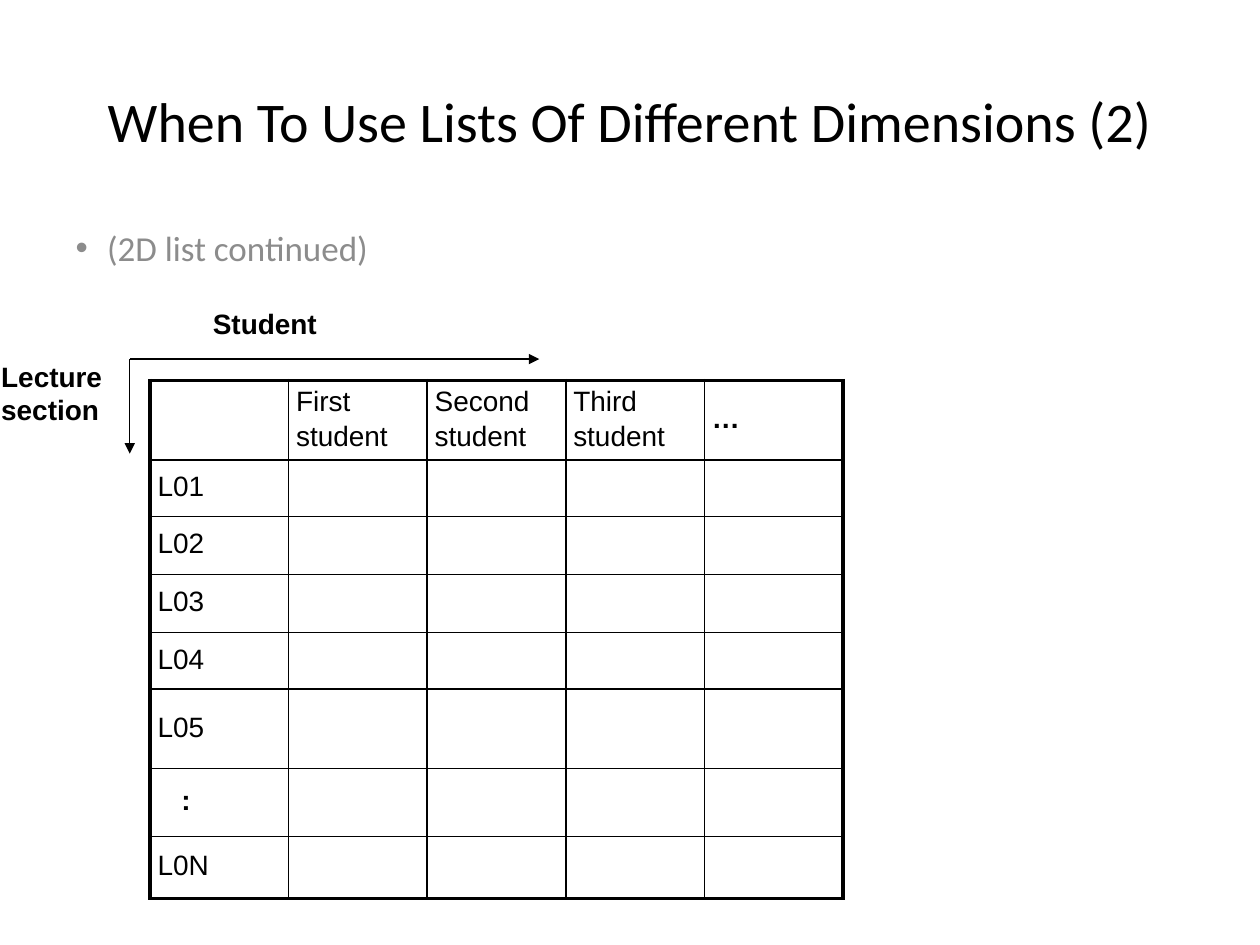
from lxml.etree import SubElement
from pptx import Presentation
from pptx.dml.color import RGBColor
from pptx.enum.shapes import MSO_CONNECTOR
from pptx.enum.text import MSO_ANCHOR, PP_ALIGN
from pptx.oxml.ns import qn
from pptx.util import Inches, Pt


def set_font(paragraph, size, color="000000", name="Arial", bold=False):
    font = paragraph.font
    font.size, font.name, font.bold = Pt(size), name, bold
    font.color.rgb = RGBColor.from_string(color)


def add_border(cell, side, width):
    line = SubElement(cell._tc.get_or_add_tcPr(), qn(f"a:{side}"), w=str(Pt(width)))
    fill = SubElement(line, qn("a:solidFill"))
    SubElement(fill, qn("a:srgbClr"), val="000000")


prs = Presentation()
prs.slide_width, prs.slide_height = Inches(10), Inches(7.5)
slide = prs.slides.add_slide(prs.slide_layouts[1])
shapes = slide.shapes

# Title and bullet
title, body = shapes.title, slide.placeholders[1]
for holder, text, top, height, size, color, align in [
    (title, "When To Use Lists Of Different Dimensions (2)", 0.33, 1.25, 32, "000000", PP_ALIGN.CENTER),
    (body, "(2D list continued)", 1.75, 0.5, 20, "8C8C8C", PP_ALIGN.LEFT),
]:
    holder.left, holder.top = Inches(0.5), Inches(top)
    holder.width, holder.height = Inches(9), Inches(height)
    holder.text_frame.text = text
    paragraph = holder.text_frame.paragraphs[0]
    paragraph.alignment = align
    set_font(paragraph, size, color, "Calibri")
bullet_format = body.text_frame.paragraphs[0]._p.get_or_add_pPr()
bullet_format.set("marL", str(Inches(0.25)))
bullet_format.set("indent", str(-Inches(0.25)))

# Axis arrows and their labels
for text, left, top, height, end_x, end_y in [
    ("Student", 1.69, 2.43, 0.27, 4.28, 2.85),
    ("Lecture section", 0.01, 2.85, 0.53, 1.03, 3.6),
]:
    arrow = shapes.add_connector(
        MSO_CONNECTOR.STRAIGHT, Inches(1.03), Inches(2.85), Inches(end_x), Inches(end_y))
    arrow.line.width = Pt(0.75)
    arrow.line.color.rgb = RGBColor.from_string("000000")
    SubElement(arrow.line._get_or_add_ln(), qn("a:tailEnd"), type="triangle")
    SubElement(arrow._element.spPr, qn("a:effectLst"))

    label = shapes.add_textbox(Inches(left), Inches(top), Inches(0.93), Inches(height)).text_frame
    label.margin_left = label.margin_right = label.margin_top = label.margin_bottom = 0
    label.word_wrap = True
    label.text = text
    set_font(label.paragraphs[0], 16, bold=True)

# Table of lecture sections by student
headings = ["", "First\nstudent", "Second\nstudent", "Third\nstudent", "…"]
sections = ["L01", "L02", "L03", "L04", "L05", ":", "L0N"]
row_heights = [0.63, 0.45, 0.46, 0.46, 0.45, 0.63, 0.54, 0.49]
last_row, last_column = len(sections), len(headings) - 1
grid = shapes.add_table(
    last_row + 1, last_column + 1, Inches(1.19), Inches(3.02), Inches(5.5), Inches(4.12)).table
grid.first_row = grid.horz_banding = False
for column in grid.columns:
    column.width = Inches(1.1)
for row, height in zip(grid.rows, row_heights):
    row.height = Inches(height)

for r, section in enumerate([""] + sections):
    for c, heading in enumerate(headings):
        cell = grid.cell(r, c)
        text = heading if r == 0 else section if c == 0 else ""
        cell.text = text
        cell.vertical_anchor = MSO_ANCHOR.MIDDLE
        cell.margin_left = Inches(0.25 if text == ":" else 0.06)
        cell.margin_right = cell.margin_top = cell.margin_bottom = 0
        for paragraph in cell.text_frame.paragraphs:
            paragraph.line_spacing = 0.9
            paragraph.space_before = Pt(4)
            set_font(paragraph, 16, bold=text in ("…", ":"))
        # Thick outer frame, thin inner lines
        for side, outer in [("lnL", c == 0), ("lnR", c == last_column),
                            ("lnT", r == 0), ("lnB", r == last_row)]:
            add_border(cell, side, 2.25 if outer else 1)
        cell.fill.background()

prs.save("out.pptx")
